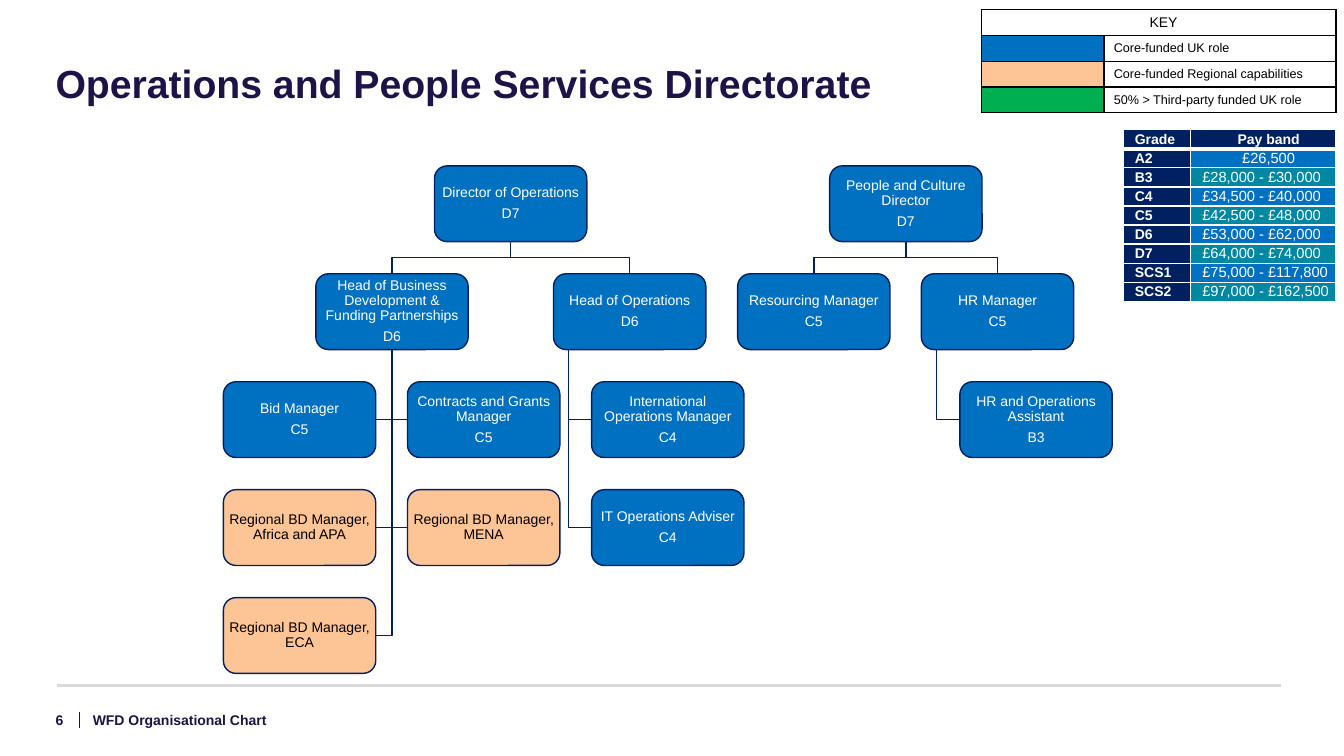
from dataclasses import dataclass

from lxml.etree import SubElement
from pptx import Presentation
from pptx.dml.color import RGBColor
from pptx.enum.shapes import MSO_CONNECTOR as Connector, MSO_SHAPE as Shape
from pptx.enum.text import MSO_ANCHOR as Anchor, MSO_AUTO_SIZE as AutoSize, PP_ALIGN as Align
from pptx.oxml.ns import qn
from pptx.util import Cm, Pt

FONT = "Arial"
INK = RGBColor(0x1E, 0x12, 0x46)
NAVY = RGBColor(0x00, 0x20, 0x60)
BLUE = RGBColor(0x00, 0x70, 0xC0)
PEACH = RGBColor(0xFD, 0xC5, 0x95)
GREEN = RGBColor(0x00, 0xB0, 0x50)
TEAL = RGBColor(0x00, 0x88, 0xA2)
GREY = RGBColor(0xD9, 0xD9, 0xD9)
BLACK = RGBColor(0, 0, 0)
WHITE = RGBColor(0xFF, 0xFF, 0xFF)

# Organisation chart grid, in centimetres
BOX_WIDTH, BOX_HEIGHT = 3.84, 1.91
FIRST_ROW, ROW_STEP = 4.18, 2.72
CENTRE_TRUNK, LEFT_TRUNK = BOX_WIDTH / 2, 0.38


@dataclass
class Role:
    """A post; trunk is the offset of the line its reports hang from, None for a fork."""
    title: str
    grade: str
    left: float
    row: int
    reports: tuple = ()
    trunk: float = None

    @property
    def top(self):
        return FIRST_ROW + self.row * ROW_STEP

    @property
    def bottom(self):
        return self.top + BOX_HEIGHT

    @property
    def centre(self):
        return self.left + BOX_WIDTH / 2


DIRECTORS = (
    Role("Director of Operations", "D7", 10.95, 0, (
        Role("Head of Business Development & Funding Partnerships", "D6", 7.96, 1, (
            Role("Bid Manager", "C5", 5.63, 2),
            Role("Contracts and Grants Manager", "C5", 10.27, 2),
            Role("Regional BD Manager, Africa and APA", "", 5.63, 3),
            Role("Regional BD Manager, MENA", "", 10.27, 3),
            Role("Regional BD Manager, ECA", "", 5.63, 4),
        ), CENTRE_TRUNK),
        Role("Head of Operations", "D6", 13.95, 1, (
            Role("International Operations Manager", "C4", 14.91, 2),
            Role("IT Operations Adviser", "C4", 14.91, 3),
        ), LEFT_TRUNK),
    )),
    Role("People and Culture Director", "D7", 20.91, 0, (
        Role("Resourcing Manager", "C5", 18.59, 1),
        Role("HR Manager", "C5", 23.22, 1, (
            Role("HR and Operations Assistant", "B3", 24.19, 2),
        ), LEFT_TRUNK),
    )),
)

KEY = (
    (BLUE, "Core-funded UK role"),
    (PEACH, "Core-funded Regional capabilities"),
    (GREEN, "50% > Third-party funded UK role"),
)

PAY_BANDS = (
    ("Grade", "Pay band"),
    ("A2", "£26,500"),
    ("B3", "£28,000 - £30,000"),
    ("C4", "£34,500 - £40,000"),
    ("C5", "£42,500 - £48,000"),
    ("D6", "£53,000 - £62,000"),
    ("D7", "£64,000 - £74,000"),
    ("SCS1", "£75,000 - £117,800"),
    ("SCS2", "£97,000 - £162,500"),
)


def style_para(para, size, color, bold=False, align=Align.LEFT):
    para.alignment = align
    font = para.font
    font.name, font.size, font.bold = FONT, Pt(size), bold
    font.color.rgb = color


def set_margins(holder, left=0, right=0, top=0, bottom=0):
    holder.margin_left, holder.margin_right = Cm(left), Cm(right)
    holder.margin_top, holder.margin_bottom = Cm(top), Cm(bottom)


def add_title(page, text):
    title = page.shapes.title
    title.left, title.top, title.width, title.height = Cm(1.4), Cm(1.63), Cm(30.86), Cm(2.54)
    frame = title.text_frame
    frame.text = text
    frame.auto_size, frame.vertical_anchor = AutoSize.NONE, Anchor.TOP
    set_margins(frame)
    style_para(frame.paragraphs[0], 28, INK, True)
    frame.paragraphs[0].line_spacing = 0.9


def add_footer_text(page, text, left, width):
    frame = page.shapes.add_textbox(Cm(left), Cm(17.83), Cm(width), Cm(0.61)).text_frame
    frame.word_wrap, frame.vertical_anchor = True, Anchor.MIDDLE
    set_margins(frame)
    frame.text = text
    style_para(frame.paragraphs[0], 10, INK, True)


def add_rule(page, x1, y1, x2, y2, color, width):
    rule = page.shapes.add_connector(Connector.STRAIGHT, Cm(x1), Cm(y1), Cm(x2), Cm(y2))
    rule.line.color.rgb, rule.line.width = color, Pt(width)
    SubElement(rule._element.spPr, qn("a:effectLst"))


def add_link(page, boss, report):
    if boss.trunk is None:
        middle = (boss.bottom + report.top) / 2
        points = [(boss.centre, boss.bottom), (boss.centre, middle),
                  (report.centre, middle), (report.centre, report.top)]
    else:
        trunk = boss.left + boss.trunk
        side = report.left if report.left > trunk else report.left + BOX_WIDTH
        level = report.top + BOX_HEIGHT / 2
        points = [(trunk, boss.bottom), (trunk, level), (side, level)]
    start, *rest = [(Cm(x), Cm(y)) for x, y in points]
    builder = page.shapes.build_freeform(*start)
    builder.add_line_segments(rest, close=False)
    link = builder.convert_to_shape()
    link.shadow.inherit = False
    link.fill.background()
    link.line.color.rgb, link.line.width = NAVY, Pt(1)


def add_role(page, role):
    """Draw a post and, below it, everyone who reports to it."""
    for report in role.reports:
        add_link(page, role, report)
        add_role(page, report)
    box = page.shapes.add_shape(Shape.ROUNDED_RECTANGLE, Cm(role.left), Cm(role.top),
                                Cm(BOX_WIDTH), Cm(BOX_HEIGHT))
    box.shadow.inherit = False
    box.fill.solid()
    box.fill.fore_color.rgb = BLUE if role.grade else PEACH
    box.line.color.rgb, box.line.width = NAVY, Pt(1)
    frame = box.text_frame
    frame.word_wrap, frame.vertical_anchor = True, Anchor.MIDDLE
    set_margins(frame, 0.02, 0.02, 0.02, 0.02)
    frame.text = "\n".join(filter(None, (role.title, role.grade)))
    for para in frame.paragraphs:
        para.line_spacing, para.space_after = 0.9, Pt(4)
        style_para(para, 10, WHITE if role.grade else BLACK, align=Align.CENTER)


def add_grid(page, left, top, widths, row_count, row_height):
    frame = page.shapes.add_table(row_count, len(widths), Cm(left), Cm(top),
                                  Cm(sum(widths)), Cm(row_height * row_count))
    table = frame.table
    table.first_row = table.horz_banding = False
    for column, width in zip(table.columns, widths):
        column.width = Cm(width)
    for row in table.rows:
        row.height = Cm(row_height)
    return table


def fill_cell(cell, text, fill, border, size, color, bold=False, align=Align.LEFT,
              left=0.25, top_line=1, bottom_line=1):
    cell.text = text
    cell.vertical_anchor = Anchor.MIDDLE
    set_margins(cell, left, 0.02)
    para = cell.text_frame.paragraphs[0]
    style_para(para, size, color, bold, align)
    if not text:
        para._p.get_or_add_endParaRPr().set("sz", str(size * 100))
    properties = cell._tc.get_or_add_tcPr()
    for side, width in (("L", 1), ("R", 1), ("T", top_line), ("B", bottom_line)):
        edge = SubElement(properties, qn(f"a:ln{side}"), w=str(Pt(width)))
        SubElement(SubElement(edge, qn("a:solidFill")), qn("a:srgbClr"), val=str(border))
    cell.fill.solid()
    cell.fill.fore_color.rgb = fill


def add_key(page):
    table = add_grid(page, 24.74, 0.24, (3.08, 5.85), len(KEY) + 1, 0.65)
    for column in range(2):
        fill_cell(table.cell(0, column), "" if column else "KEY", WHITE, BLACK, 10, BLACK,
                  align=Align.CENTER)
    table.cell(0, 0).merge(table.cell(0, 1))
    for row, (color, meaning) in enumerate(KEY, 1):
        fill_cell(table.cell(row, 0), "", color, BLACK, 9, BLACK)
        fill_cell(table.cell(row, 1), meaning, WHITE, BLACK, 9, BLACK)


def add_pay_bands(page):
    table = add_grid(page, 28.3, 3.27, (1.7, 3.66), len(PAY_BANDS), 0.48)
    for row, (grade, pay) in enumerate(PAY_BANDS):
        header = row == 0
        lines = {"left": 0.3, "top_line": 3 if row == 1 else 1, "bottom_line": 3 if header else 1}
        band = NAVY if header else BLUE if row % 2 else TEAL
        fill_cell(table.cell(row, 0), grade, NAVY, WHITE, 10, WHITE, True, **lines)
        fill_cell(table.cell(row, 1), pay, band, WHITE, 10 if header else 10.5, WHITE, header,
                  Align.CENTER if row < 2 else Align.LEFT, **lines)


def main():
    deck = Presentation()
    deck.slide_width, deck.slide_height = Cm(33.87), Cm(19.05)
    page = deck.slides.add_slide(deck.slide_layouts[5])
    add_rule(page, 2, 17.93, 2, 18.34, INK, 0.75)
    add_rule(page, 1.43, 17.27, 32.29, 17.27, GREY, 2)
    add_title(page, "Operations and People Services Directorate")
    add_footer_text(page, "WFD Organisational Chart", 2.34, 12.9)
    add_footer_text(page, "6", 1.4, 0.94)
    for director in DIRECTORS:
        add_role(page, director)
    add_key(page)
    add_pay_bands(page)
    deck.save("out.pptx")


if __name__ == "__main__":
    main()
